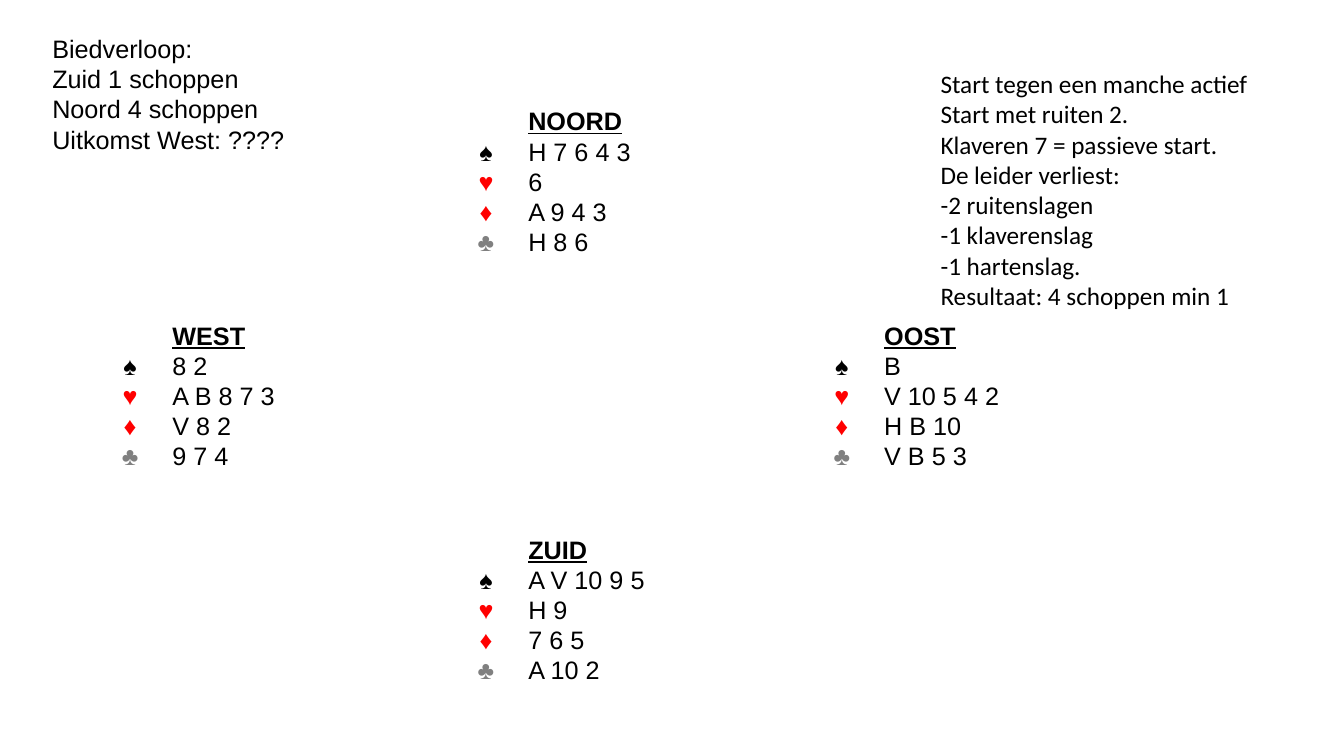
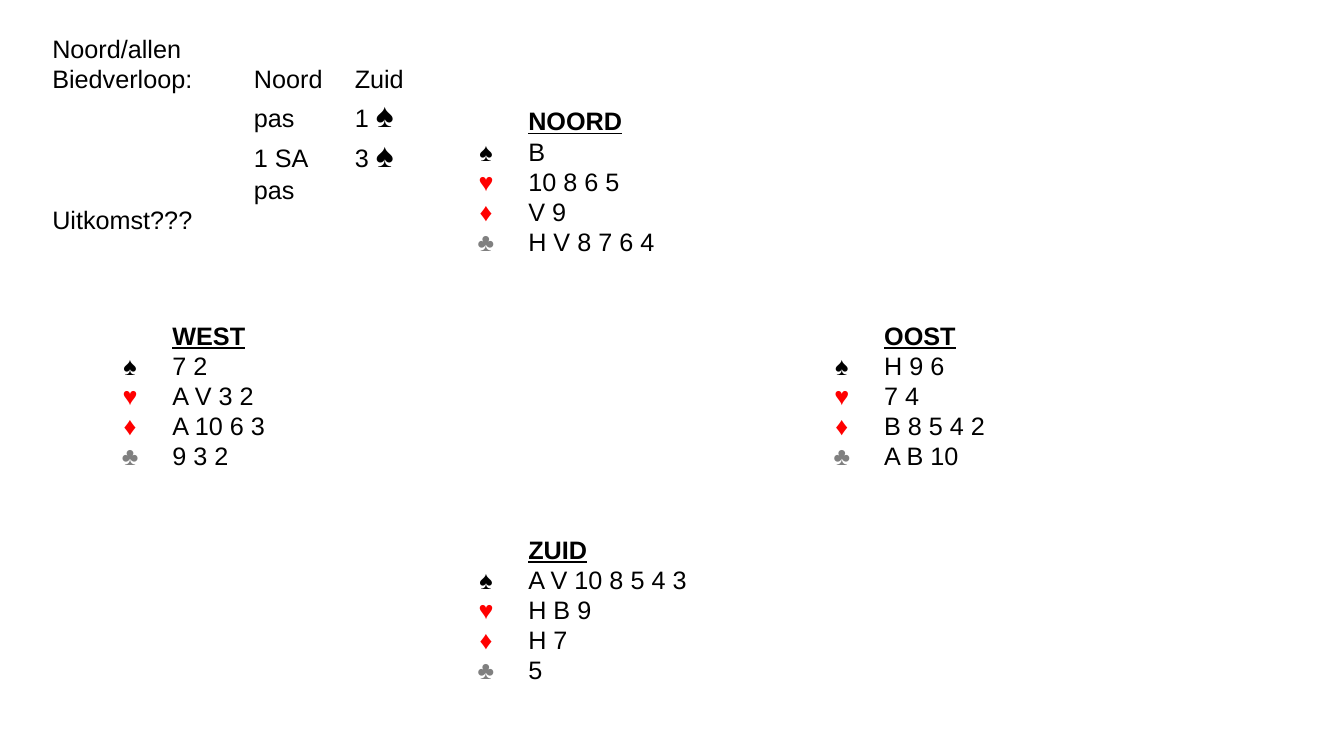
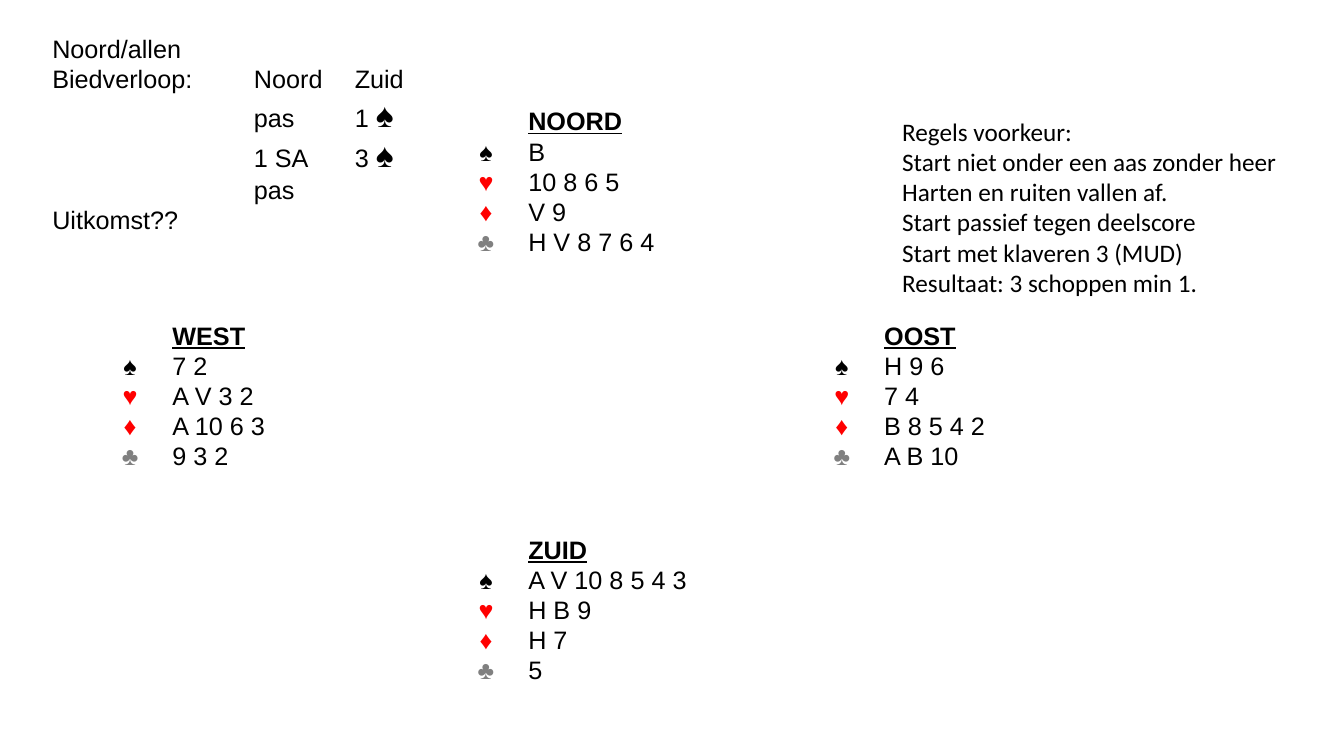
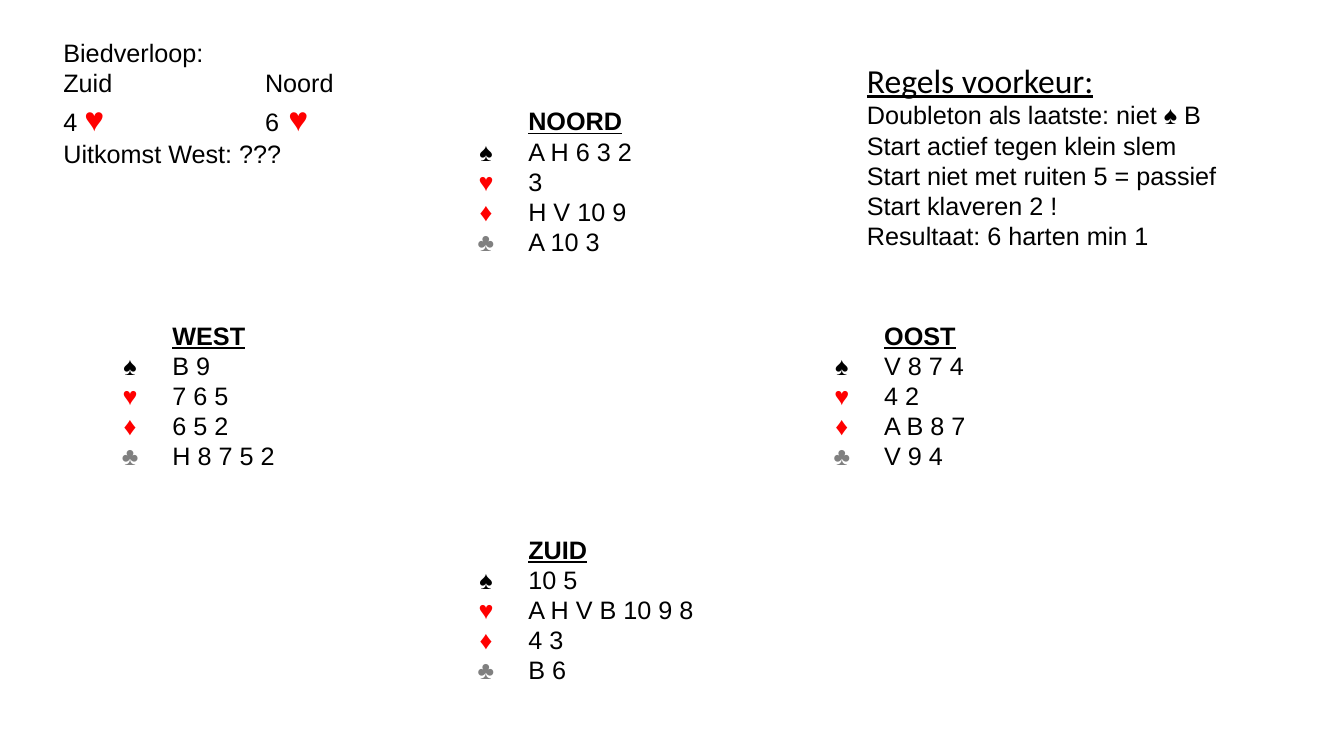
from dataclasses import dataclass

import pptx
import pptx.dml.color
import pptx.enum.text
import pptx.oxml.ns
import pptx.presentation
import pptx.slide
import pptx.text.text
import pptx.util
from lxml import etree

Inches = pptx.util.Inches
BLACK, RED, GREY = "000000", "FF0000", "808080"
SUITS = {"♠": BLACK, "♥": RED, "♦": RED, "♣": GREY}
LINE_SPACING = 1.07
HEADING_HEIGHT = 0.3
TAB_STOPS = (2, 3)


@dataclass(frozen=True)
class Run:
    text: str
    size: int = 18
    color: str = BLACK
    font: str = "Arial"
    bold: bool = False
    underline: bool = False


Line = list[Run]


@dataclass(frozen=True)
class Note:
    left: float
    top: float
    width: float
    height: float
    lines: list[Line]
    wrap: bool = True


@dataclass(frozen=True)
class Hand:
    name: str
    row: int
    col: int


@dataclass(frozen=True)
class Board:
    cards: dict[str, list[str]]
    notes: list[Note]


# Seats in the table: the column holds the suits, the next one the cards
HANDS = [Hand("NOORD", 0, 2), Hand("WEST", 1, 0), Hand("OOST", 1, 4), Hand("ZUID", 2, 2)]


# Text
def rgb(color: str) -> pptx.dml.color.RGBColor:
    return pptx.dml.color.RGBColor.from_string(color)


def plain(*texts: str, font: str = "Arial") -> list[Line]:
    return [[Run(text, font=font)] for text in texts]


def big(text: str, color: str) -> Run:
    return Run(text, 24, color)


def write(tf: pptx.text.text.TextFrame, lines: list[Line], spacing: float | None = None,
          align: pptx.enum.text.PP_ALIGN | None = None) -> None:
    for i, line in enumerate(lines):
        p = tf.add_paragraph() if i else tf.paragraphs[0]
        p.line_spacing, p.alignment = spacing, align
        for run in line:
            r = p.add_run()
            r.text = run.text
            f = r.font
            f.name, f.size = run.font, pptx.util.Pt(run.size)
            f.bold, f.underline = run.bold, run.underline
            f.color.rgb = rgb(run.color)


def set_tabs(p: pptx.text.text._Paragraph) -> None:
    qn = pptx.oxml.ns.qn
    tabs = etree.SubElement(p._p.get_or_add_pPr(), qn("a:tabLst"))
    for stop in TAB_STOPS:
        etree.SubElement(tabs, qn("a:tab"), pos=str(Inches(stop)), algn="l")


def add_note(s: pptx.slide.Slide, note: Note) -> None:
    sp = s.shapes.add_textbox(*map(Inches, (note.left, note.top, note.width, note.height)))
    tf = sp.text_frame
    tf.word_wrap = note.wrap
    tf.auto_size = pptx.enum.text.MSO_AUTO_SIZE.SHAPE_TO_FIT_TEXT
    write(tf, note.lines)
    for p in tf.paragraphs:
        if "\t" in p.text:
            set_tabs(p)


# Card table
def add_deal(s: pptx.slide.Slide, cards: dict[str, list[str]]) -> None:
    table = s.shapes.add_table(3, 6, *map(Inches, (0.94, 0.83, 10.58, 6.18))).table
    table.first_row = table.horz_banding = False
    for i, column in enumerate(table.columns):
        column.width = Inches(2.83 if i % 2 else 0.7)
    for row, height in zip(table.rows, (1.94, 2.31, 1.94)):
        row.height = Inches(height)
    for cell in table.iter_cells():
        cell.fill.background()
        cell.margin_left = cell.margin_right = Inches(0.07)
        cell.margin_top = cell.margin_bottom = 0
        cell.vertical_anchor = pptx.enum.text.MSO_ANCHOR.MIDDLE
    table.cell(1, 2).merge(table.cell(1, 3))

    for hand in HANDS:
        suits = table.cell(hand.row, hand.col)
        suits.margin_top = Inches(HEADING_HEIGHT)
        write(suits.text_frame, [[Run(suit, color=color)] for suit, color in SUITS.items()],
              LINE_SPACING, pptx.enum.text.PP_ALIGN.CENTER)
        heading = [Run(hand.name, bold=True, underline=True)]
        write(table.cell(hand.row, hand.col + 1).text_frame,
              [heading, *plain(*cards[hand.name])], LINE_SPACING)


# Content
def part_score_bidding(question: str) -> Note:
    return Note(0.42, 0.28, 3.81, 2.12, [
        *plain("Noord/allen", "Biedverloop:\tNoord\tZuid"),
        [Run("\tpas\t1 "), big("♠", BLACK)],
        [Run("\t1 SA\t3 "), big("♠", BLACK)],
        *plain("\tpas", question),
    ])


GAME_CARDS = {
    "NOORD": ["H 7 6 4 3", "6", "A 9 4 3", "H 8 6"],
    "WEST": ["8 2", "A B 8 7 3", "V 8 2", "9 7 4"],
    "OOST": ["B", "V 10 5 4 2", "H B 10", "V B 5 3"],
    "ZUID": ["A V 10 9 5", "H 9", "7 6 5", "A 10 2"],
}
PART_SCORE_CARDS = {
    "NOORD": ["B", "10 8 6 5", "V 9", "H V 8 7 6 4"],
    "WEST": ["7 2", "A V 3 2", "A 10 6 3", "9 3 2"],
    "OOST": ["H 9 6", "7 4", "B 8 5 4 2", "A B 10"],
    "ZUID": ["A V 10 8 5 4 3", "H B 9", "H 7", "5"],
}
SLAM_CARDS = {
    "NOORD": ["A H 6 3 2", "3", "H V 10 9", "A 10 3"],
    "WEST": ["B 9", "7 6 5", "6 5 2", "H 8 7 5 2"],
    "OOST": ["V 8 7 4", "4 2", "A B 8 7", "V 9 4"],
    "ZUID": ["10 5", "A H V B 10 9 8", "4 3", "B 6"],
}

BOARDS = [
    Board(GAME_CARDS, [
        Note(0.42, 0.28, 3.85, 1.31, plain(
            "Biedverloop:", "Zuid 1 schoppen", "Noord 4 schoppen", "Uitkomst West: ????")),
        Note(9.23, 0.63, 3.29, 2.52, plain(
            "Start tegen een manche actief", "Start met ruiten 2.",
            "Klaveren 7 = passieve start.", "De leider verliest:", "-2 ruitenslagen",
            "-1 klaverenslag", "-1 hartenslag.", "Resultaat: 4 schoppen min 1",
            font="Calibri"), wrap=False),
    ]),
    Board(PART_SCORE_CARDS, [part_score_bidding("Uitkomst???")]),
    Board(PART_SCORE_CARDS, [
        part_score_bidding("Uitkomst??"),
        Note(8.85, 1.1, 3.96, 1.92, plain(
            "Regels voorkeur:", "Start niet onder een aas zonder heer",
            "Harten en ruiten vallen af.", "Start passief tegen deelscore",
            "Start met klaveren 3 (MUD)", "Resultaat: 3 schoppen min 1.",
            font="Calibri"), wrap=False),
    ]),
    Board(SLAM_CARDS, [
        Note(0.53, 0.32, 3.92, 1.41, [
            *plain("Biedverloop:", "Zuid\tNoord"),
            [Run("4 "), big("♥", RED), Run("\t6"), big(" ♥", RED)],
            *plain("Uitkomst West: ???"),
        ]),
        Note(8.5, 0.54, 3.68, 2.02, [
            [Run("Regels voorkeur:", 24, font="Calibri", underline=True)],
            *plain("Doubleton als laatste: niet ♠ B", "Start actief tegen klein slem",
                   "Start niet met ruiten 5 = passief", "Start klaveren 2 !",
                   "Resultaat: 6 harten min 1"),
        ]),
    ]),
]


def add_board(prs: pptx.presentation.Presentation, board: Board) -> None:
    s = prs.slides.add_slide(prs.slide_layouts[6])
    add_deal(s, board.cards)
    for note in board.notes:
        add_note(s, note)


def main() -> None:
    prs = pptx.Presentation()
    prs.slide_width, prs.slide_height = Inches(13.33), Inches(7.5)
    for board in BOARDS:
        add_board(prs, board)
    prs.save("out.pptx")


if __name__ == "__main__":
    main()
